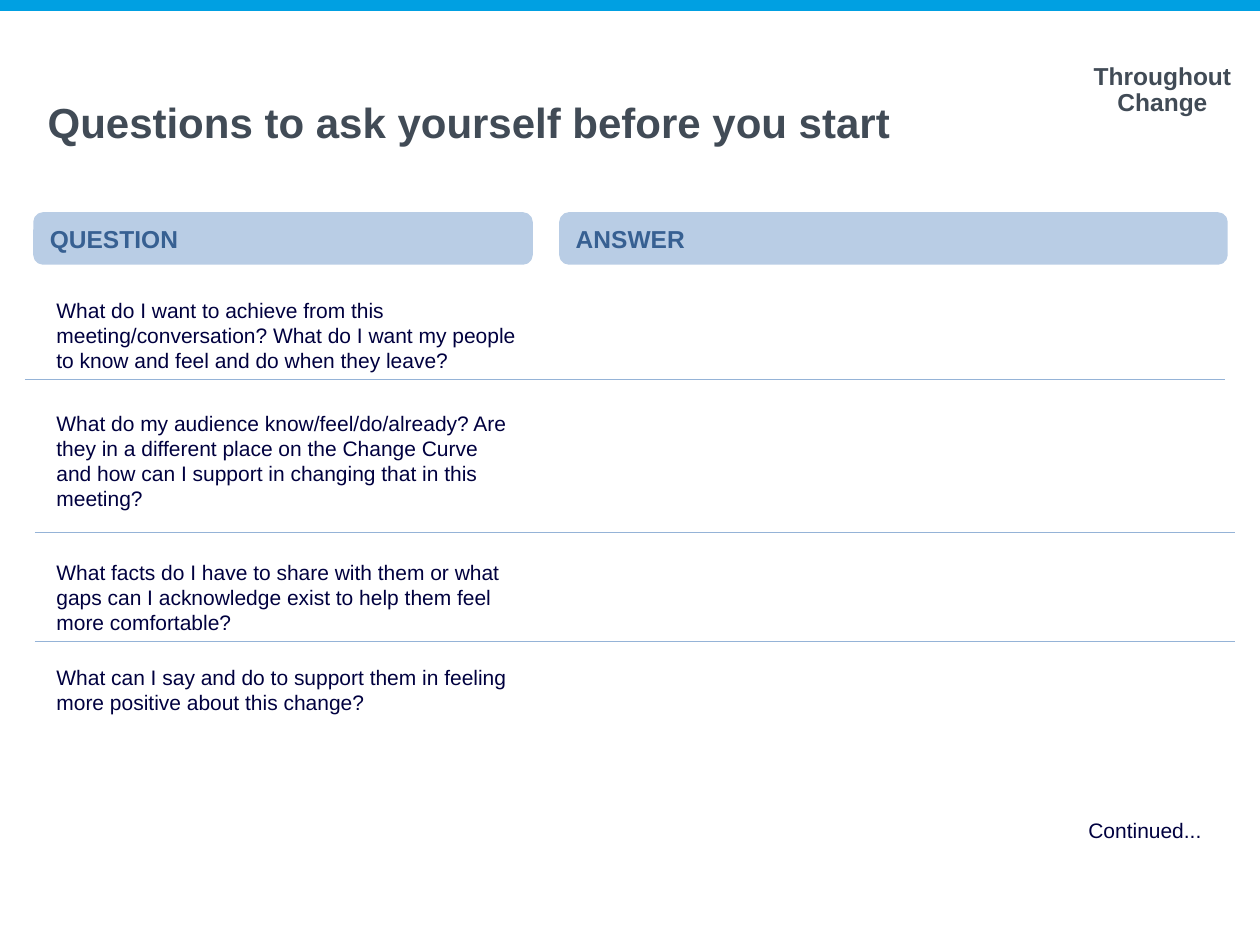
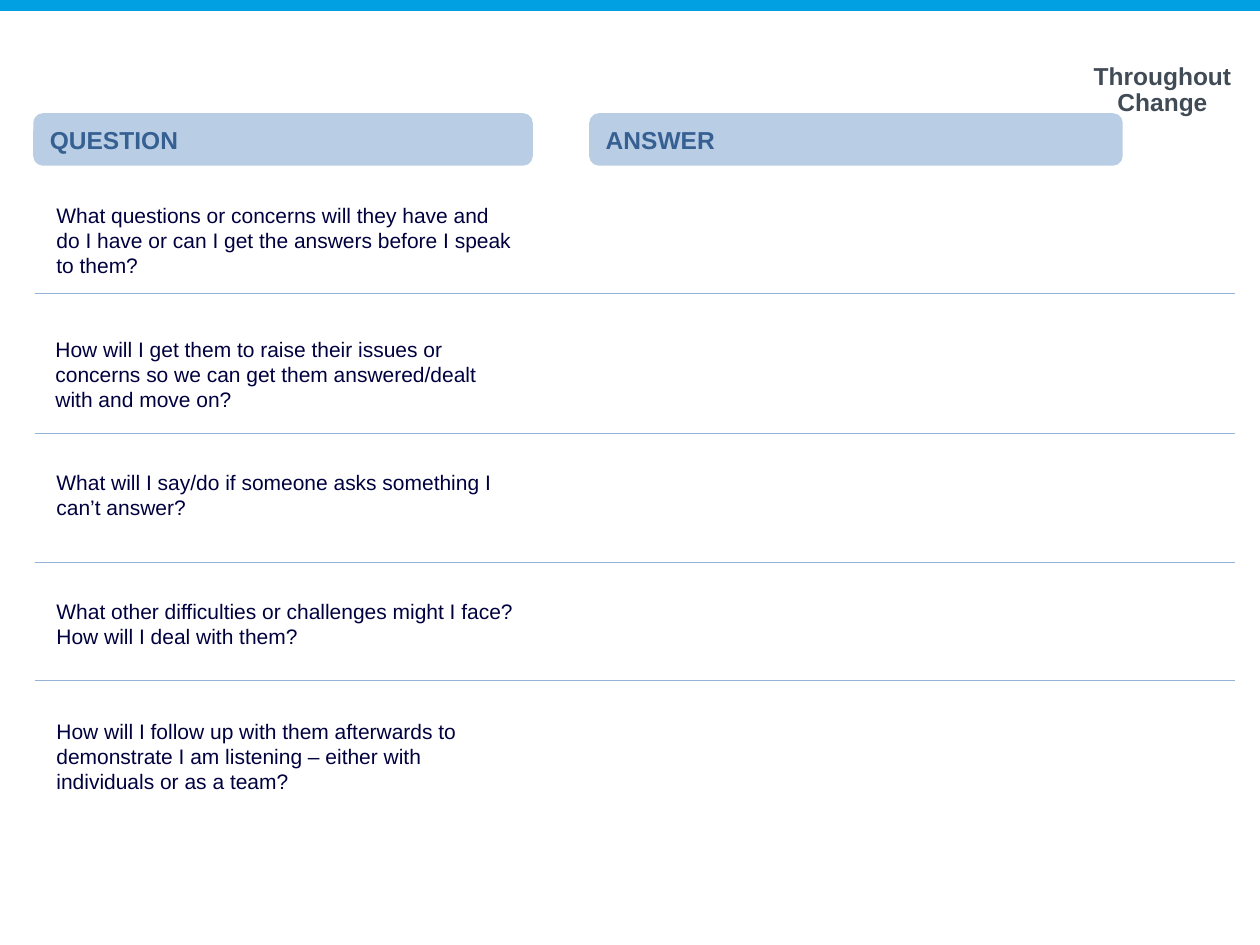
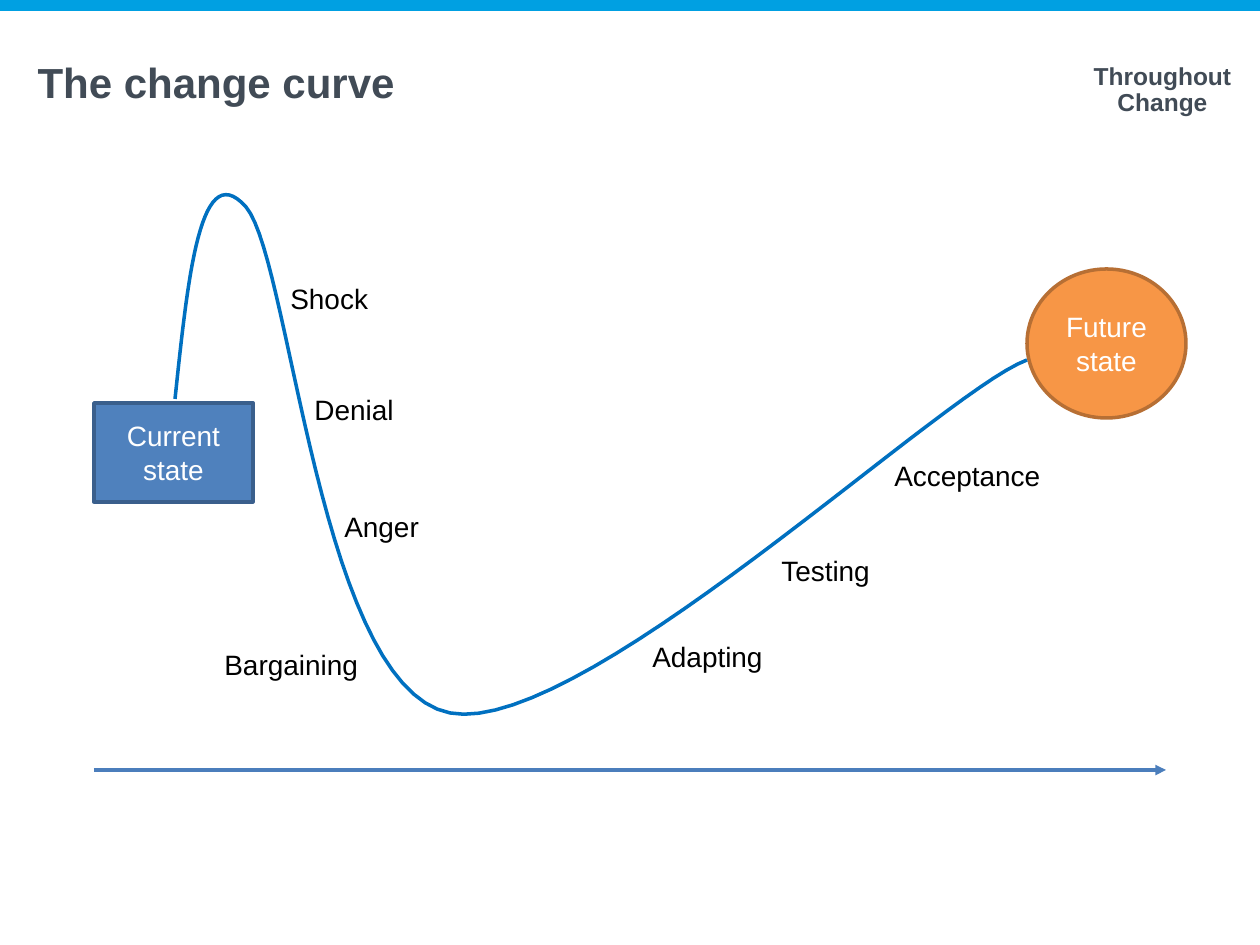
from lxml.etree import SubElement
from pptx import Presentation
from pptx.dml.color import RGBColor
from pptx.enum.shapes import MSO_CONNECTOR, MSO_SHAPE
from pptx.enum.text import MSO_ANCHOR, MSO_AUTO_SIZE, PP_ALIGN
from pptx.oxml.ns import qn
from pptx.util import Pt

EMU_PER_PX = 914400 / 126
FONT = "Arial"
BAND_BLUE = RGBColor(0x00, 0xA0, 0xE2)
SLATE = RGBColor(0x41, 0x4B, 0x56)
HEADER_FILL = RGBColor(0xB9, 0xCD, 0xE5)
HEADER_TEXT = RGBColor(0x37, 0x60, 0x92)
NAVY = RGBColor(0x00, 0x00, 0x3F)
RULE_BLUE = RGBColor(0x95, 0xB3, 0xD7)
STATE_BLUE = RGBColor(0x4F, 0x81, 0xBD)
STATE_BLUE_EDGE = RGBColor(0x3A, 0x5F, 0x8C)
STATE_ORANGE = RGBColor(0xF7, 0x96, 0x46)
STATE_ORANGE_EDGE = RGBColor(0xB7, 0x6F, 0x34)
ARROW_BLUE = RGBColor(0x4B, 0x7E, 0xBC)
CURVE_BLUE = RGBColor(0x00, 0x70, 0xC0)
WHITE = RGBColor(0xFF, 0xFF, 0xFF)
BLACK = RGBColor(0x00, 0x00, 0x00)


def px(*lengths):
    return [round(length * EMU_PER_PX) for length in lengths]


def write(shape, text, size, color, bold=False, align=PP_ALIGN.LEFT, anchor=MSO_ANCHOR.TOP):
    frame = shape.text_frame
    frame.word_wrap = True
    frame.vertical_anchor = anchor
    paragraph = frame.paragraphs[0]
    paragraph.alignment = align
    run = paragraph.add_run()
    run.text = text
    run.font.name = FONT
    run.font.size = Pt(size)
    run.font.bold = bold
    run.font.color.rgb = color
    return frame


deck = Presentation()
deck.slide_width, deck.slide_height = px(1260, 945)
title_only, blank = deck.slide_layouts[5], deck.slide_layouts[6]
first_questions = deck.slides.add_slide(title_only)
more_questions = deck.slides.add_slide(blank)
change_curve = deck.slides.add_slide(title_only)

band = first_questions.shapes.add_shape(MSO_SHAPE.RECTANGLE, *px(0, -4, 1260, 15))
band.shadow.inherit = False
band.fill.solid()
band.fill.fore_color.rgb = BAND_BLUE
band.line.fill.background()
phase = first_questions.shapes.add_textbox(*px(1065, 58, 195, 67))
phase_frame = write(phase, "Throughout Change", 14, SLATE, True, PP_ALIGN.CENTER)
phase_frame.paragraphs[0].line_spacing = 0.9
for shared in (band, phase):
    deck.slide_master.shapes.element.append(shared.element)

for slide, heading, box in (
    (first_questions, "Questions to ask yourself before you start", (35, 90, 1032, 100)),
    (change_curve, "The change curve", (25, 50, 1032, 139)),
):
    title = slide.shapes.title
    title.left, title.top, title.width, title.height = px(*box)
    write(title, heading, 24, SLATE, True).auto_size = MSO_AUTO_SIZE.NONE

for slide, heading, left, top, width in (
    (first_questions, "QUESTION", 35, 214, 496),
    (first_questions, "ANSWER", 561, 214, 665),
    (more_questions, "QUESTION", 35, 115, 496),
    (more_questions, "ANSWER", 591, 115, 530),
):
    header = slide.shapes.add_shape(MSO_SHAPE.ROUNDED_RECTANGLE, *px(left, top, width, 49))
    header.shadow.inherit = False
    header.fill.solid()
    header.fill.fore_color.rgb = HEADER_FILL
    header.line.color.rgb = HEADER_FILL
    header.line.width = Pt(2)
    write(header, heading, 14, HEADER_TEXT, True, anchor=MSO_ANCHOR.MIDDLE)

for slide, text, left, top, width, height in (
    (first_questions, "What do I want to achieve from this meeting/conversation? What do I want my people to know and feel and do when they leave?", 44, 291, 486, 89),
    (first_questions, "What do my audience know/feel/do/already? Are they in a different place on the Change Curve and how can I support in changing that in this meeting?", 44, 404, 486, 115),
    (first_questions, "What facts do I have to share with them or what gaps can I acknowledge exist to help them feel more comfortable?", 44, 553, 486, 89),
    (first_questions, "What can I say and do to support them in feeling more positive about this change?", 44, 658, 486, 63),
    (first_questions, "Continued...", 1076, 811, 149, 39),
    (more_questions, "What questions or concerns will they have and do I have or can I get the answers before I speak to them?", 44, 196, 486, 89),
    (more_questions, "How will I get them to raise their issues or concerns so we can get them answered/dealt with and move on?", 43, 330, 486, 89),
    (more_questions, "What will I say/do if someone asks something I can’t answer?", 44, 463, 486, 63),
    (more_questions, "What other difficulties or challenges might I face? How will I deal with them?", 44, 592, 486, 63),
    (more_questions, "How will I follow up with them afterwards to demonstrate I am listening – either with individuals or as a team?", 44, 712, 486, 89),
):
    question = slide.shapes.add_textbox(*px(left, top, width, height))
    write(question, text, 12, NAVY).auto_size = MSO_AUTO_SIZE.SHAPE_TO_FIT_TEXT

rules = [(first_questions, 25, 379)]
rules += [(first_questions, 35, y) for y in (532, 641)]
rules += [(more_questions, 35, y) for y in (293, 433, 562, 680)]
lines = [(slide, x, x + 1200, y, RULE_BLUE, 0.5) for slide, x, y in rules]
lines.append((change_curve, 94, 1166, 770, ARROW_BLUE, 2))
for slide, start, end, y, color, weight in lines:
    connector = slide.shapes.add_connector(MSO_CONNECTOR.STRAIGHT, *px(start, y, end, y))
    connector.line.color.rgb = color
    connector.line.width = Pt(weight)
    properties = connector.element.spPr
    if slide is change_curve:
        SubElement(properties.find(qn("a:ln")), qn("a:tailEnd"), type="triangle")
    SubElement(properties, qn("a:effectLst"))

for preset, text, box, fill, edge in (
    (MSO_SHAPE.RECTANGLE, "Current state", (94, 403, 159, 99), STATE_BLUE, STATE_BLUE_EDGE),
    (MSO_SHAPE.OVAL, "Future state", (1027, 269, 159, 149), STATE_ORANGE, STATE_ORANGE_EDGE),
):
    state = change_curve.shapes.add_shape(preset, *px(*box))
    state.shadow.inherit = False
    state.fill.solid()
    state.fill.fore_color.rgb = fill
    state.line.color.rgb = edge
    state.line.width = Pt(2)
    write(state, text, 16, WHITE, align=PP_ALIGN.CENTER, anchor=MSO_ANCHOR.MIDDLE)

STEPS = 30
bends = [(175, 399), (188, 277), (200, 155), (246, 207), (291, 260),
         (319, 688), (450, 713), (580, 738), (941, 392), (1027, 360)]
curve_points = []
for first in range(0, len(bends) - 1, 3):
    controls = bends[first:first + 4]
    for step in range(1, STEPS + 1):
        t = step / STEPS
        weights = ((1 - t) ** 3, 3 * t * (1 - t) ** 2, 3 * t ** 2 * (1 - t), t ** 3)
        curve_points.append(px(*(sum(w * c for w, c in zip(weights, axis)) for axis in zip(*controls))))
outline = change_curve.shapes.build_freeform(*px(*bends[0]))
outline.add_line_segments(curve_points, close=False)
curve = outline.convert_to_shape()
curve.shadow.inherit = False
curve.fill.background()
curve.line.color.rgb = CURVE_BLUE
curve.line.width = Pt(2)

for stage, left, top, width in (
    ("Shock", 278, 275, 193),
    ("Denial", 302, 386, 105),
    ("Anger", 332, 503, 103),
    ("Bargaining", 212, 641, 160),
    ("Adapting", 640, 633, 137),
    ("Testing", 769, 547, 115),
    ("Acceptance", 882, 452, 179),
):
    label = change_curve.shapes.add_textbox(*px(left, top, width, 47))
    label_frame = write(label, stage, 16, BLACK)
    label_frame.word_wrap = stage == "Shock"
    label_frame.auto_size = MSO_AUTO_SIZE.SHAPE_TO_FIT_TEXT

deck.save("out.pptx")
